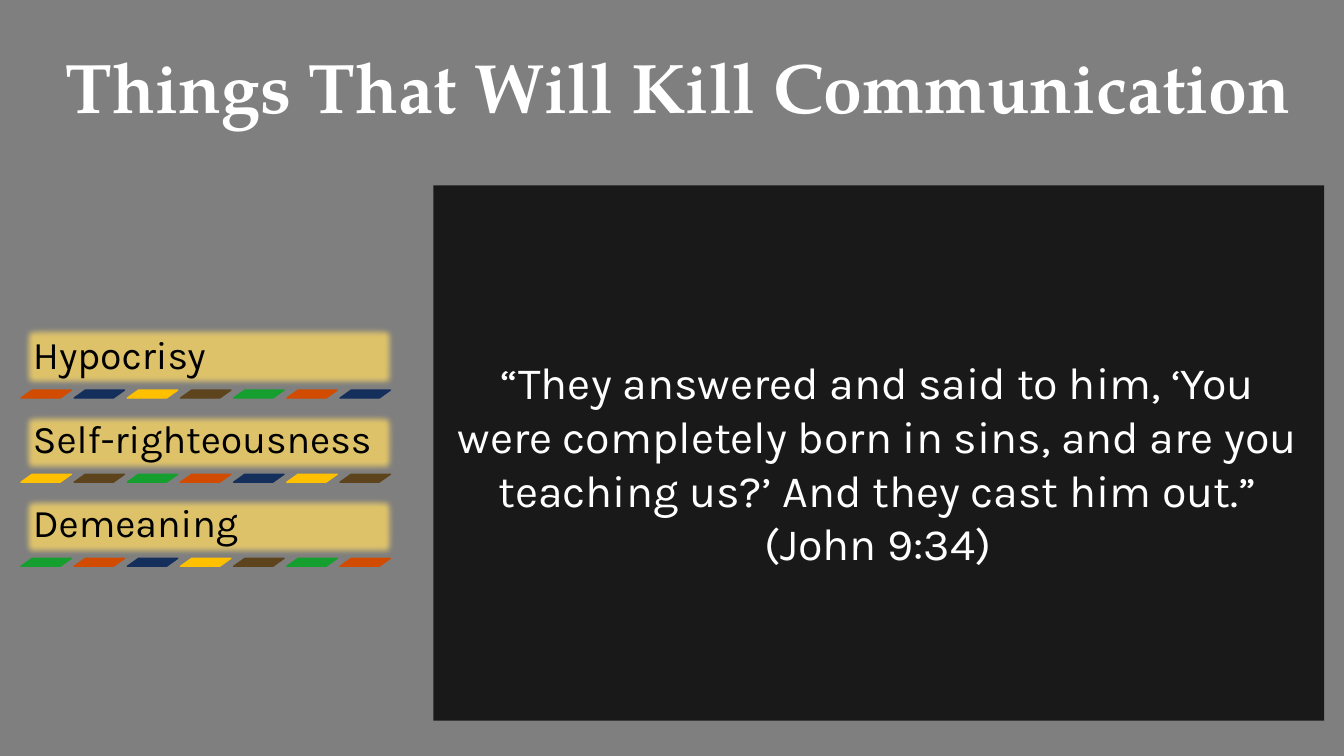
import pptx
import pptx.util
import pptx.dml.color
import pptx.enum.shapes
import pptx.enum.text
import pptx.oxml
import pptx.oxml.ns

Cm = pptx.util.Cm
Pt = pptx.util.Pt
RGB = pptx.dml.color.RGBColor
Shape = pptx.enum.shapes.MSO_SHAPE
Anchor = pptx.enum.text.MSO_ANCHOR
Align = pptx.enum.text.PP_ALIGN
qn = pptx.oxml.ns.qn

BLACK = RGB(0x00, 0x00, 0x00)
WHITE = RGB(0xFF, 0xFF, 0xFF)
GOLD = RGB(0xFF, 0xD9, 0x66)
ORANGE = RGB(0xD1, 0x4C, 0x00)
NAVY = RGB(0x14, 0x2F, 0x5C)
YELLOW = RGB(0xFF, 0xC0, 0x00)
BROWN = RGB(0x5E, 0x44, 0x1C)
GREEN = RGB(0x14, 0x9F, 0x2F)
CYCLE = [ORANGE, NAVY, YELLOW, BROWN, GREEN]

SERIF = "TeX Gyre Pagella"
SANS = "Karla"

TITLE = "Things That Will Kill Communication"
QUOTE = (
    "“They answered and said to him, ‘You were completely born in sins, "
    "and are you teaching us?’ And they cast him out.” (John 9:34)"
)
ITEMS = [("Hypocrisy", 1.68), ("Self-righteousness", 1.6), ("Demeaning", 1.6)]
DASHES = 7


def add_block(slide, kind, box, color):
    block = slide.shapes.add_shape(kind, *map(Cm, box))
    block.shadow.inherit = False
    block.fill.solid()
    block.fill.fore_color.rgb = color
    block.line.fill.background()
    return block


def add_veil(slide, box, color, alpha):
    veil = add_block(slide, Shape.RECTANGLE, box, color)
    tint = veil.fill._xPr.find(qn("a:solidFill"))[0]
    tint.append(pptx.oxml.parse_xml(
        f'<a:alpha {pptx.oxml.ns.nsdecls("a")} val="{alpha * 1000}"/>'))
    return veil


def add_words(slide, box, words, size, face, color, align, anchor, pads):
    label = slide.shapes.add_textbox(*map(Cm, box))
    frame = label.text_frame
    frame.word_wrap = True
    frame.vertical_anchor = anchor
    (frame.margin_left, frame.margin_top,
     frame.margin_right, frame.margin_bottom) = map(Cm, pads)
    para = frame.paragraphs[0]
    para.alignment = align
    run = para.add_run()
    run.text = words
    run.font.size = Pt(size)
    run.font.name = face
    run.font.color.rgb = color
    return para, run


def add_title(slide, box):
    para, run = add_words(slide, box, TITLE, 50, SERIF, WHITE,
                          Align.CENTER, Anchor.BOTTOM, [0] * 4)
    para.line_spacing = 0.9
    run.font.bold = True


def add_quote(slide, box):
    left, top, width, height = box
    add_veil(slide, box, BLACK, 80)
    add_words(slide, (left + 0.13, top + 0.03, width - 0.3, height - 0.18),
              QUOTE, 32, SANS, WHITE, Align.CENTER, Anchor.TOP,
              (0.25, 4.24, 0.25, 0.13))


def add_item(slide, box, words, first):
    left, top, width, height = box
    bar = add_veil(slide, box, GOLD, 75)
    glow = bar._element.spPr.find(qn("a:effectLst"))
    glow.append(pptx.oxml.parse_xml(
        f'<a:softEdge {pptx.oxml.ns.nsdecls("a")} rad="63500"/>'))
    para, run = add_words(slide, box, words, 28, SANS, BLACK,
                          Align.LEFT, Anchor.BOTTOM, [0.3] * 4)
    para.line_spacing = 0.9
    para.space_after = Pt(24)
    for i in range(DASHES):
        color = CYCLE[(first + i) % len(CYCLE)]
        dash = add_block(slide, Shape.PARALLELOGRAM,
                         (left + i * 1.34, top + height, 1.27, 0.2), color)
        dash.adjustments[0] = 1.41
        dash.line.color.rgb = color
        dash.line.width = Pt(1)


def add_list(slide, left, base, width, pitch):
    for row, (words, height) in enumerate(ITEMS):
        top = base + row * pitch - height
        add_item(slide, (left, top, width, height), words, row * DASHES)


def main():
    deck = pptx.Presentation()
    deck.slide_width = Cm(33.87)
    deck.slide_height = Cm(19.05)
    slide = deck.slides.add_slide(deck.slide_layouts[6])
    add_veil(slide, (0, 0, 33.87, 19.05), BLACK, 50)
    add_quote(slide, (10.92, 4.67, 22.45, 13.49))
    add_title(slide, (0.97, 0.66, 32.26, 2.57))
    add_list(slide, 0.53, 9.83, 9.5, 2.12)
    deck.save("out.pptx")


if __name__ == "__main__":
    main()
